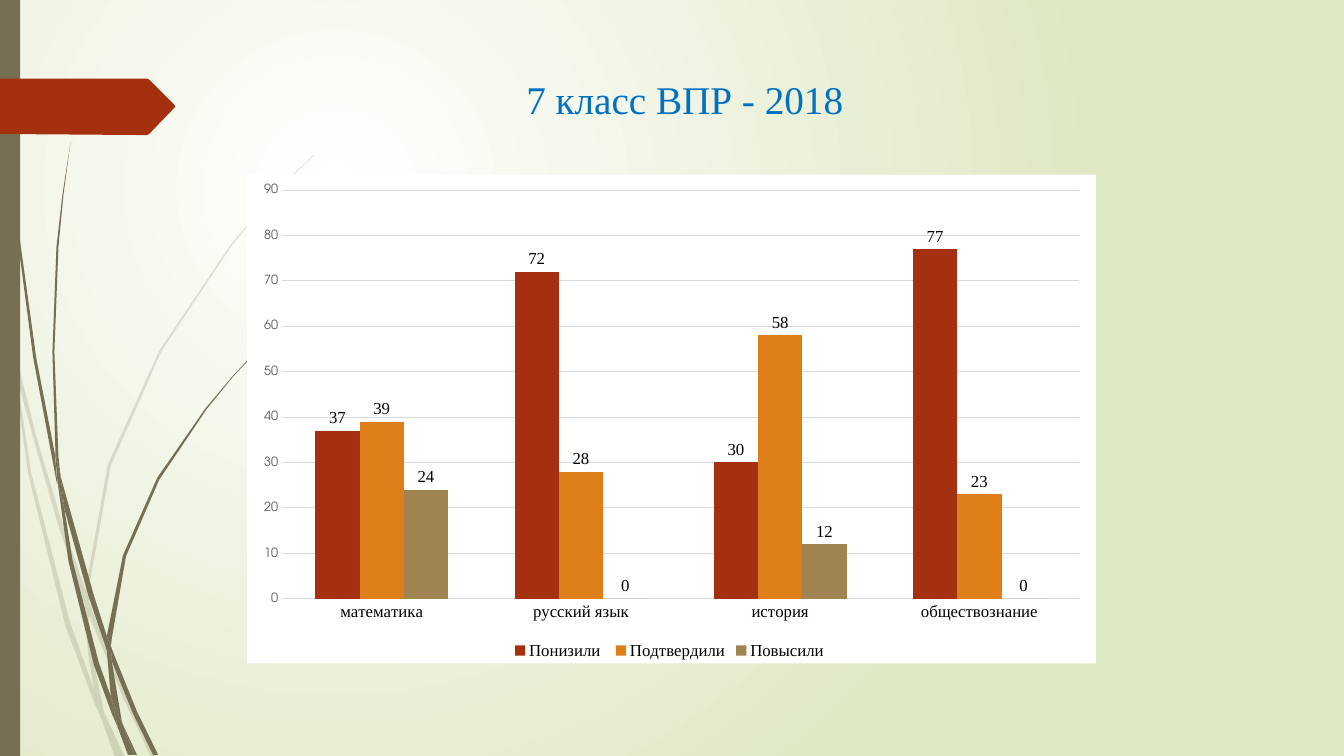
import lxml.etree
import pptx
import pptx.chart.data
import pptx.dml.color
import pptx.enum.chart
import pptx.enum.shapes
import pptx.enum.text
import pptx.oxml
import pptx.oxml.ns
import pptx.util

Cm, Pt = pptx.util.Cm, pptx.util.Pt
RGBColor = pptx.dml.color.RGBColor
qn = pptx.oxml.ns.qn

WHITE = RGBColor(0xFF, 0xFF, 0xFF)
BLACK = RGBColor(0, 0, 0)
LIME = RGBColor(0xDF, 0xE8, 0xC4)
OLIVE = RGBColor(0x76, 0x6F, 0x54)
RUST = RGBColor(0xA5, 0x30, 0x10)
ORANGE = RGBColor(0xDE, 0x7E, 0x18)
TAN = RGBColor(0x9F, 0x83, 0x51)
BLUE = RGBColor(0x00, 0x70, 0xC0)
GREY = RGBColor(0x59, 0x59, 0x59)
GRID = RGBColor(0xD9, 0xD9, 0xD9)
SERIF, SANS = "Times New Roman", "TeX Gyre Adventor"

SUBJECTS = ["математика", "русский язык", "история", "обществознание"]
RESULTS = [
    ("Понизили ", (37, 72, 30, 77), RUST),
    ("Подтвердили", (39, 28, 58, 23), ORANGE),
    ("Повысили ", (24, 0, 12, 0), TAN),
]

OUTLINE_UNIT = Cm(0.0254)
PALE_BLADES = [
    [(11, 350), (9, 322), (0, 282), (0, 299), (10, 344)],
    [(58, 522), (84, 599), (85, 586), (62, 520), (36, 433), (14, 345), (17, 376), (37, 449)],
    [(92, 607), (88, 596), (88, 610), (123, 694), (150, 751), (155, 751), (127, 692)],
    [(119, 751), (124, 751), (105, 711)],
    [(93, 683), (70, 619), (31, 469), (17, 376), (11, 350), (28, 470), (65, 621), (92, 693),
     (101, 714), (99, 707)],
    [(84, 599), (87, 646), (93, 683), (96, 692), (105, 711), (103, 706), (91, 646), (88, 610),
     (88, 608)],
    [(88, 584), (110, 462), (160, 349), (229, 245), (268, 198), (290, 175), (312, 154),
     (312, 153), (289, 175), (268, 197), (228, 244), (158, 348), (107, 461), (85, 584),
     (85, 586), (88, 596)],
    [(101, 714), (114, 751), (119, 751)],
    [(88, 608), (88, 610), (88, 596), (85, 586), (84, 599)],
    [(96, 692), (93, 683), (99, 707), (101, 714), (119, 751), (105, 711)],
]
DARK_BLADES = [
    [(7, 110), (17, 233), (33, 355), (56, 477), (57, 481), (55, 457), (55, 453), (36, 355),
     (19, 232), (8, 109), (5, 48), (4, 0), (3, 0), (4, 48)],
    [(88, 592), (106, 645), (106, 633), (106, 631), (93, 590), (60, 472), (64, 505)],
    [(113, 649), (110, 641), (111, 656), (132, 708), (152, 749), (157, 749), (136, 706)],
    [(110, 691), (98, 657), (72, 556), (64, 505), (57, 477), (68, 557), (93, 659), (111, 708),
     (117, 722), (116, 717)],
    [(60, 472), (58, 453), (54, 349), (58, 245), (63, 193), (70, 141), (62, 193), (56, 245),
     (52, 349), (55, 449)],
    [(133, 749), (136, 749), (122, 719)],
    [(57, 477), (64, 505), (60, 472), (55, 449), (55, 453)],
    [(111, 633), (125, 552), (158, 476), (205, 406), (231, 374), (245, 359), (261, 344),
     (260, 344), (245, 358), (231, 373), (204, 405), (156, 474), (122, 551), (106, 631),
     (110, 641)],
    [(117, 722), (127, 749), (131, 749)],
    [(106, 645), (110, 691), (116, 706), (122, 719), (121, 716), (111, 656), (109, 651)],
    [(106, 645), (109, 651), (111, 656), (110, 641), (106, 631), (106, 633)],
    [(116, 706), (110, 691), (116, 717), (117, 722), (130, 749), (133, 749), (122, 719)],
]
POINTER = [(174, 106), (148, 133), (146, 134), (136, 134), (0, 133), (0, 78), (136, 78),
           (146, 78), (148, 79), (173, 104)]


def style_font(font, size, color, name=SERIF):
    """Set size, colour and typeface of a font."""
    font.size, font.name, font.bold = Pt(size), name, False
    font.color.rgb = color


def paint(shape, color):
    """Give a shape a plain fill without line or shadow."""
    shape.fill.solid()
    shape.fill.fore_color.rgb = color
    shape.line.fill.background()
    shape.shadow.inherit = False


def add_outline(shapes, left, top, outline, color):
    """Draw a filled polygon given in hundredths of an inch."""
    builder = shapes.build_freeform(*outline[0], scale=OUTLINE_UNIT)
    builder.add_line_segments(outline[1:], close=True)
    polygon = builder.convert_to_shape(left, top)
    paint(polygon, color)
    return polygon


def add_grass(slide, left, top, blades, opacity=100):
    """Draw a group of grass blades."""
    tuft = slide.shapes.add_group_shape()
    for outline in blades:
        blade = add_outline(tuft.shapes, left, top, outline, OLIVE)
        if opacity < 100:
            tint = blade.element.spPr.find(qn("a:solidFill")).find(qn("a:srgbClr"))
            lxml.etree.SubElement(tint, qn("a:alpha"), val=str(opacity * 1000))


def add_backdrop(slide):
    """Fill the background with a glow centred in the upper left."""
    glow = slide.background.fill
    glow.gradient()
    for stop, color, position in zip(glow.gradient_stops, (WHITE, LIME), (0, 1)):
        stop.color.rgb, stop.position = color, position
    gradient = next(slide.element.iter(qn("a:gradFill")))
    gradient.remove(gradient.find(qn("a:lin")))
    circle = lxml.etree.SubElement(gradient, qn("a:path"), path="circle")
    lxml.etree.SubElement(circle, qn("a:fillToRect"), l="50000", t="50000", r="100000", b="100000")


def add_decoration(slide, left, top, height):
    """Draw the grass, the side strip and the pointer along the left edge."""
    add_grass(slide, left, top, PALE_BLADES, opacity=20)
    add_grass(slide, left, top, DARK_BLADES)
    rectangle = pptx.enum.shapes.MSO_SHAPE.RECTANGLE
    strip = slide.shapes.add_shape(rectangle, left, top, Cm(0.51), height)
    paint(strip, OLIVE)
    add_outline(slide.shapes, left, top, POINTER, RUST)


def add_heading(slide, left, top, width, height):
    """Place and format the slide title."""
    title = slide.shapes.title
    title.left, title.top, title.width, title.height = left, top, width, height
    frame = title.text_frame
    frame.text = "7 класс ВПР - 2018"
    frame.word_wrap = False
    frame.vertical_anchor = pptx.enum.text.MSO_ANCHOR.TOP
    heading = frame.paragraphs[0]
    heading.alignment = pptx.enum.text.PP_ALIGN.CENTER
    style_font(heading.font, 28, BLUE)


def add_results_chart(slide, left, top, width, height):
    """Draw the clustered columns of results by subject."""
    results = pptx.chart.data.CategoryChartData()
    results.categories = SUBJECTS
    for name, values, _ in RESULTS:
        results.add_series(name, values)
    enums = pptx.enum.chart
    chart = slide.shapes.add_chart(
        enums.XL_CHART_TYPE.COLUMN_CLUSTERED, left, top, width, height, results).chart
    style_font(chart.font, 10, BLACK, SANS)
    chart.has_title = False
    chart.has_legend = True
    chart.legend.position = enums.XL_LEGEND_POSITION.BOTTOM
    chart.legend.include_in_layout = False
    style_font(chart.legend.font, 12, BLACK)

    subjects, scale = chart.category_axis, chart.value_axis
    for axis in (subjects, scale):
        axis.major_tick_mark = axis.minor_tick_mark = enums.XL_TICK_MARK.NONE
        axis.format.line.fill.background()
    style_font(subjects.tick_labels.font, 12, BLACK)
    style_font(scale.tick_labels.font, 9, GREY, SANS)
    scale.minimum_scale, scale.maximum_scale, scale.major_unit = 0, 90, 10
    scale.major_gridlines.format.line.color.rgb = GRID
    scale.major_gridlines.format.line.width = Pt(0.75)

    plot = chart.plots[0]
    plot.gap_width, plot.overlap, plot.vary_by_categories = 150, 0, False
    for series, (_, _, color) in zip(plot.series, RESULTS):
        series.format.fill.solid()
        series.format.fill.fore_color.rgb = color
        labels = series.data_labels
        labels.show_value = True
        labels.position = enums.XL_LABEL_POSITION.OUTSIDE_END
        style_font(labels.font, 12, BLACK)

    panel = pptx.oxml.parse_xml(
        f'<c:spPr {pptx.oxml.ns.nsdecls("c", "a")}><a:solidFill><a:srgbClr val="{WHITE}"/>'
        '</a:solidFill><a:ln><a:noFill/></a:ln></c:spPr>')
    chart.element.find(qn("c:chart")).addnext(panel)


def main():
    """Build and save the presentation."""
    deck = pptx.Presentation()
    deck.slide_width, deck.slide_height = Cm(33.87), Cm(19.05)
    slide = deck.slides.add_slide(deck.slide_layouts[5])
    add_backdrop(slide)
    add_decoration(slide, Cm(0), Cm(0), deck.slide_height)
    add_heading(slide, Cm(12.96), Cm(1.78), Cm(8.59), Cm(1.45))
    add_results_chart(slide, Cm(6.23), Cm(4.4), Cm(21.39), Cm(12.32))
    deck.save("out.pptx")


if __name__ == "__main__":
    main()
